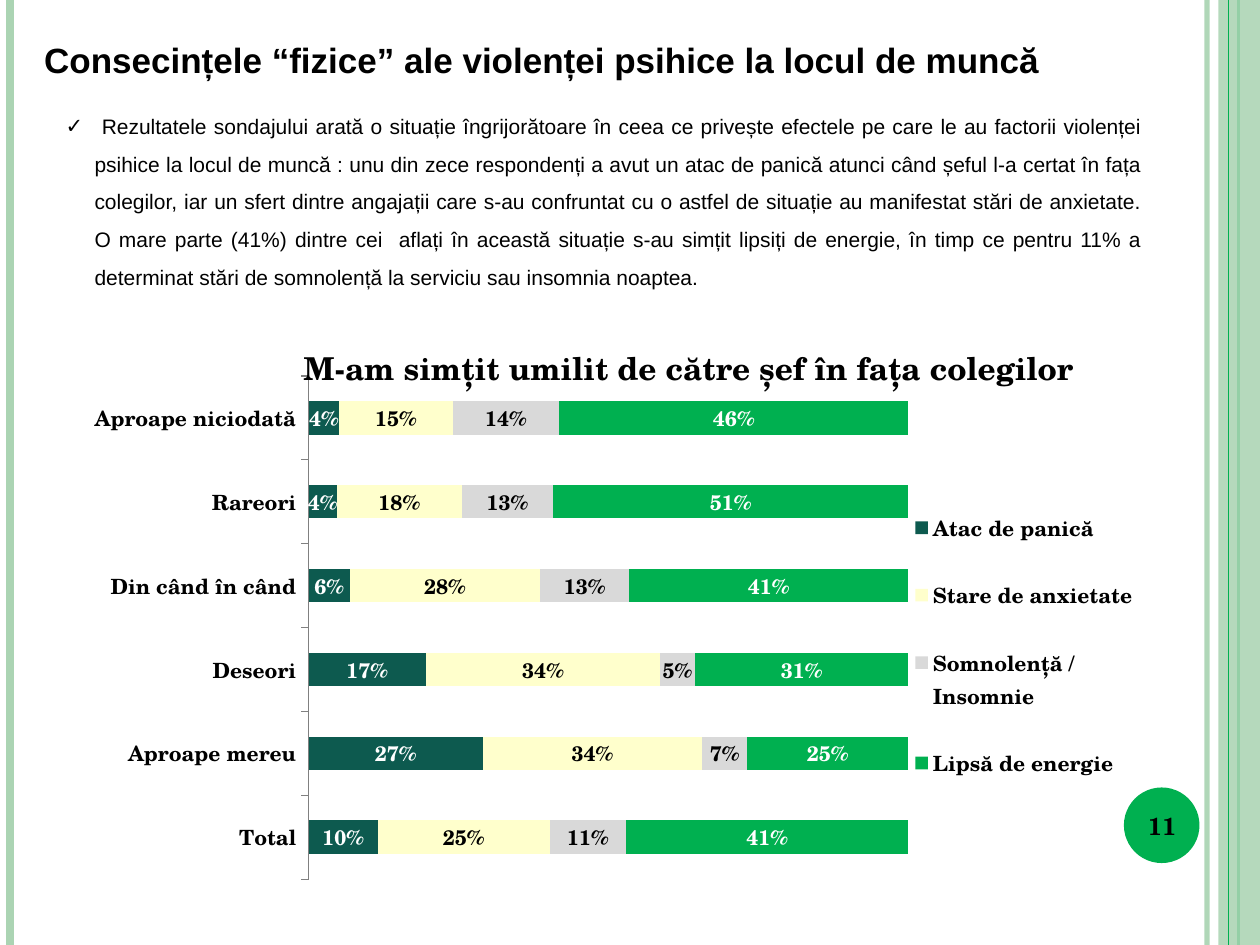
from dataclasses import dataclass

from lxml.etree import SubElement
from pptx import Presentation
from pptx.chart.data import CategoryChartData
from pptx.dml.color import RGBColor
from pptx.enum.chart import XL_CHART_TYPE as ChartType
from pptx.enum.chart import XL_LEGEND_POSITION as LegendPosition
from pptx.enum.chart import XL_TICK_LABEL_POSITION as TickLabels
from pptx.enum.chart import XL_TICK_MARK as TickMark
from pptx.enum.shapes import MSO_CONNECTOR as Connector
from pptx.enum.shapes import MSO_SHAPE as Shape
from pptx.enum.text import MSO_ANCHOR as Anchor
from pptx.enum.text import MSO_AUTO_SIZE as AutoSize
from pptx.enum.text import PP_ALIGN as Align
from pptx.oxml import parse_xml
from pptx.oxml.ns import nsdecls, qn
from pptx.util import Inches, Pt

BLACK = RGBColor(0x00, 0x00, 0x00)
WHITE = RGBColor(0xFF, 0xFF, 0xFF)
SAGE = RGBColor(0xAB, 0xD4, 0xB3)
GREEN = RGBColor(0x00, 0xB0, 0x50)
TEAL = RGBColor(0x0D, 0x5A, 0x4F)
CREAM = RGBColor(0xFF, 0xFF, 0xCC)
LIGHT_GRAY = RGBColor(0xD9, 0xD9, 0xD9)
AXIS_GRAY = RGBColor(0x80, 0x80, 0x80)
SANS, SERIF = "Arial", "TeX Gyre Schola"
SLIDE_W, SLIDE_H = 10, 7.5

TITLE = "Consecințele “fizice” ale violenței psihice la locul de muncă"
FINDINGS = (
    " Rezultatele sondajului arată o situație îngrijorătoare în ceea ce privește "
    "efectele pe care le au factorii violenței psihice la locul de muncă : unu din "
    "zece respondenți a avut un atac de panică atunci când șeful l-a certat în fața "
    "colegilor, iar un sfert dintre angajații care s-au confruntat cu o astfel de "
    "situație au manifestat stări de anxietate. O mare parte (41%) dintre cei  aflați "
    "în această situație s-au simțit lipsiți de energie, în timp ce pentru 11% a "
    "determinat stări de somnolență la serviciu sau insomnia noaptea."
)
CHART_TITLE = "M-am simțit umilit de către șef în fața colegilor"
FREQUENCIES = ["Aproape niciodată", "Rareori", "Din când în când",
               "Deseori", "Aproape mereu", "Total"]


@dataclass
class Stripe:
    x: float
    color: RGBColor
    width: float
    opacity: int = 100


@dataclass
class Effect:
    name: str
    shares: list[float]
    color: RGBColor
    label_color: RGBColor


STRIPES = [
    Stripe(9.58, SAGE, 3, 93),
    Stripe(0.08, SAGE, 4.5),
    Stripe(9.83, GREEN, 1.5),
]
BAND_EDGE = Stripe(9.75, GREEN, 0.75)
EFFECTS = [
    Effect("Atac de panică", [0.04, 0.04, 0.06, 0.17, 0.27, 0.10], TEAL, WHITE),
    Effect("Stare de anxietate", [0.15, 0.18, 0.28, 0.34, 0.34, 0.25], CREAM, BLACK),
    Effect("Somnolență / Insomnie", [0.14, 0.13, 0.13, 0.05, 0.07, 0.11], LIGHT_GRAY, BLACK),
    Effect("Lipsă de energie", [0.46, 0.51, 0.41, 0.31, 0.25, 0.41], GREEN, WHITE),
]


def set_font(font, face: str, size: float, bold: bool = False, color: RGBColor = BLACK) -> None:
    for attribute, value in {"name": face, "size": Pt(size), "bold": bold}.items():
        setattr(font, attribute, value)
    font.color.rgb = color


def set_opacity(shape, percent: int) -> None:
    for color in shape.element.spPr.iter(qn("a:srgbClr")):
        SubElement(color, qn("a:alpha"), val=str(percent * 1000))


def place(shape, left: float, top: float, width: float, height: float) -> None:
    box = {"left": left, "top": top, "width": width, "height": height}
    for attribute, value in box.items():
        setattr(shape, attribute, Inches(value))


def draw_stripe(slide, stripe: Stripe) -> None:
    x = Inches(stripe.x)
    line = slide.shapes.add_connector(Connector.STRAIGHT, x, 0, x, Inches(SLIDE_H))
    line.line.color.rgb = stripe.color
    line.line.width = Pt(stripe.width)
    SubElement(line.element.spPr, qn("a:effectLst"))
    if stripe.opacity < 100:
        set_opacity(line, stripe.opacity)


def draw_filled(slide, kind: Shape, box: tuple, color: RGBColor):
    shape = slide.shapes.add_shape(kind, *map(Inches, box))
    shape.shadow.inherit = False
    shape.fill.solid()
    shape.fill.fore_color.rgb = color
    shape.line.fill.background()
    return shape


def draw_frame(slide) -> None:
    """Draw the side stripes, the right band and the page number disc."""
    for stripe in STRIPES:
        draw_stripe(slide, stripe)
    band = draw_filled(slide, Shape.RECTANGLE, (9.67, 0, SLIDE_W - 9.67, SLIDE_H), SAGE)
    set_opacity(band, 87)
    draw_stripe(slide, BAND_EDGE)
    draw_filled(slide, Shape.OVAL, (8.92, 6.25, 0.6, 0.6), GREEN)


def write(shape, text: str, align: Align, anchor: Anchor, **font):
    shape.text_frame.text = text
    shape.text_frame.vertical_anchor = anchor
    paragraph = shape.text_frame.paragraphs[0]
    paragraph.alignment = align
    set_font(paragraph.runs[0].font, **font)
    return paragraph


def write_title(title) -> None:
    place(title, 0.25, 0.25, 8.16, 0.44)
    write(title, TITLE, Align.LEFT, Anchor.MIDDLE, face=SANS, size=20, bold=True)
    title.text_frame.word_wrap = False
    title.text_frame.auto_size = AutoSize.SHAPE_TO_FIT_TEXT


def write_findings(body) -> None:
    place(body, 0.42, 0.75, 8.75, 1.62)
    paragraph = write(body, FINDINGS, Align.JUSTIFY, Anchor.TOP, face=SANS, size=12)
    body.text_frame.auto_size = AutoSize.SHAPE_TO_FIT_TEXT
    paragraph.line_spacing = 1.5
    paragraph.space_before = Pt(0)
    properties = paragraph.runs[0].font._element.getparent().getparent().get_or_add_pPr()
    properties.set("marL", str(Inches(0.23)))
    properties.set("indent", str(-Inches(0.23)))
    SubElement(properties, qn("a:buFont"), typeface=SANS)
    SubElement(properties, qn("a:buChar"), char="✓")


def set_layout(part, after: str | None, inner: bool = False, **fractions: float) -> None:
    """Place a chart part by fractions of the chart, behind the child named after."""
    for old in part.findall(qn("c:layout")):
        part.remove(old)
    target = '<c:layoutTarget val="inner"/>' if inner else ""
    modes = "".join(f'<c:{key}Mode val="edge"/>' for key in "xy")
    values = "".join(f'<c:{key} val="{value}"/>' for key, value in fractions.items())
    layout = parse_xml(f'<c:layout {nsdecls("c")}><c:manualLayout>{target}{modes}{values}'
                       "</c:manualLayout></c:layout>")
    if after:
        part.find(qn(after)).addnext(layout)
    else:
        part.insert(0, layout)


def draw_chart(slide) -> None:
    data = CategoryChartData(number_format="0%")
    data.categories = FREQUENCIES
    for effect in EFFECTS:
        data.add_series(effect.name, effect.shares)
    box = map(Inches, (0.58, 2.42, 8.5, 4.7))
    chart = slide.shapes.add_chart(ChartType.BAR_STACKED_100, *box, data).chart
    set_font(chart.font, SERIF, 10)

    chart.chart_title.text_frame.text = CHART_TITLE
    heading = chart.chart_title.text_frame.paragraphs[0].runs[0]
    set_font(heading.font, SERIF, 18, True)
    chart.has_legend = True
    chart.legend.position = LegendPosition.RIGHT
    chart.legend.include_in_layout = False
    set_font(chart.legend.font, SERIF, 12, True)

    categories, values = chart.category_axis, chart.value_axis
    categories.reverse_order = True
    categories.major_tick_mark = TickMark.OUTSIDE
    categories.tick_label_position = TickLabels.LOW
    categories.format.line.color.rgb = AXIS_GRAY
    set_font(categories.tick_labels.font, SERIF, 12, True)
    values.visible = False
    values.has_major_gridlines = False
    values.maximum_scale = 1
    values.tick_labels.number_format = "0%"
    values.tick_labels.number_format_is_linked = False

    plot = chart.plots[0]
    plot.vary_by_categories = False
    plot.gap_width, plot.overlap = 150, 100
    for series, effect in zip(plot.series, EFFECTS):
        series.format.fill.solid()
        series.format.fill.fore_color.rgb = effect.color
        labels = series.data_labels
        label_format = {"show_value": True, "number_format": "0%",
                        "number_format_is_linked": False}
        for attribute, value in label_format.items():
            setattr(labels, attribute, value)
        set_font(labels.font, SERIF, 12, True, effect.label_color)

    root = chart.element.find(qn("c:chart"))
    title = root.find(qn("c:title"))
    title.find(qn("c:overlay")).set("val", "1")
    set_layout(title, "c:tx", x=0.21, y=0.05)
    set_layout(root.find(qn("c:legend")), "c:legendPos", x=0.79, y=0.29, w=0.21, h=0.57)
    set_layout(root.find(qn("c:plotArea")), None, True, x=0.22, y=0.12, w=0.56, h=0.85)


def main() -> None:
    deck = Presentation()
    deck.slide_width, deck.slide_height = Inches(SLIDE_W), Inches(SLIDE_H)
    slide = deck.slides.add_slide(deck.slide_layouts[1])
    draw_frame(slide)
    write_title(slide.shapes.title)
    write_findings(slide.placeholders[1])
    draw_chart(slide)
    page_number = slide.shapes.add_textbox(*map(Inches, (8.89, 6.27, 0.67, 0.57)))
    page_number.text_frame.word_wrap = True
    write(page_number, "11", Align.CENTER, Anchor.MIDDLE, face=SERIF, size=14, bold=True)
    deck.save("out.pptx")


if __name__ == "__main__":
    main()
